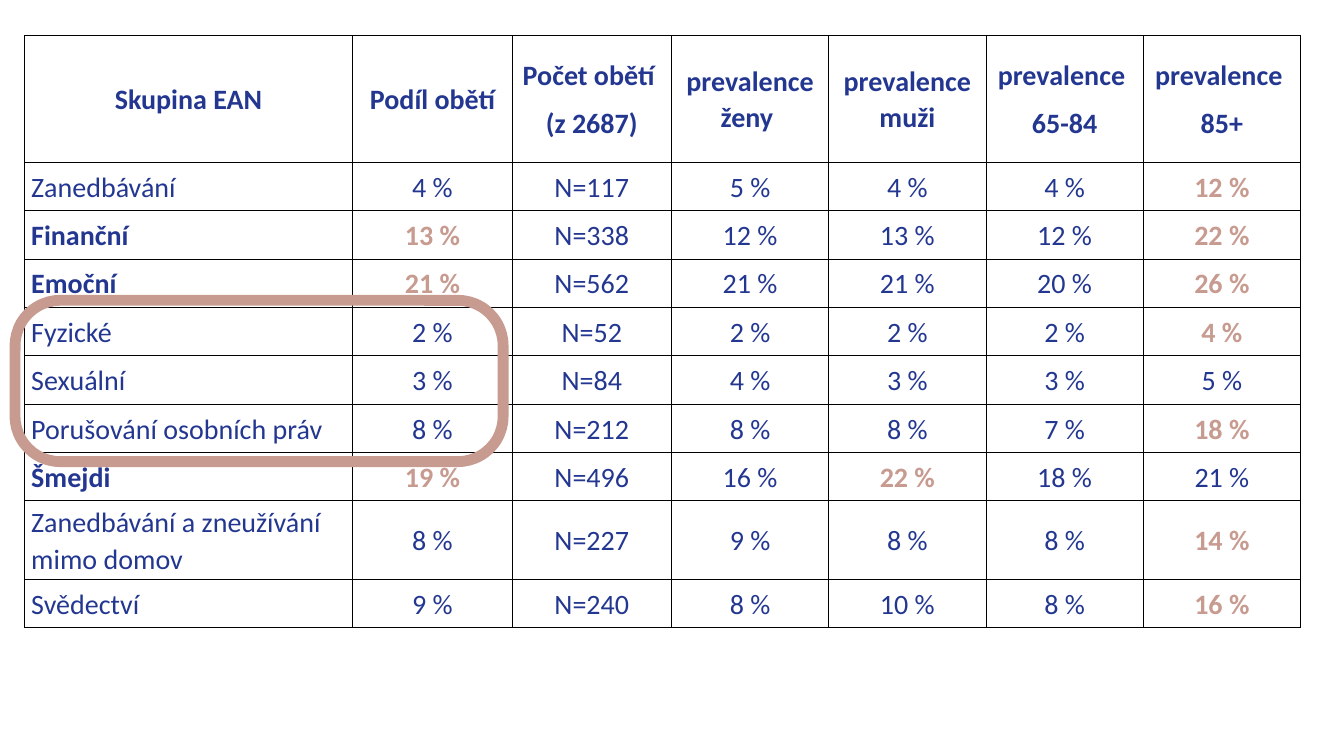
import pptx
import pptx.dml.color
import pptx.enum.shapes
import pptx.enum.text
import pptx.oxml
import pptx.oxml.ns
import pptx.util

Inches = pptx.util.Inches
Pt = pptx.util.Pt
ALIGN = pptx.enum.text.PP_ALIGN

NAVY, ROSE, BLACK = "233791", "C89B91", "000000"
COL_WIDTHS = [3.26] + [1.58] * 2 + [1.56] * 4
ROW_HEIGHTS = [1.26] + [0.48] * 7 + [0.78, 0.48]

HEADER = ["Skupina EAN", "Podíl obětí", "Počet obětí \n(z 2687)", "prevalence ženy ",
          "prevalence muži", "prevalence \n65-84", "prevalence \n85+"]
# group, share, victims, women, men, 65-84, 85+
GROUPS = [
    ("Zanedbávání", 4, 117, 5, 4, 4, 12),
    ("Finanční", 13, 338, 12, 13, 12, 22),
    ("Emoční", 21, 562, 21, 21, 20, 26),
    ("Fyzické", 2, 52, 2, 2, 2, 4),
    ("Sexuální", 3, 84, 4, 3, 3, 5),
    ("Porušování osobních práv", 8, 212, 8, 8, 7, 18),
    ("Šmejdi", 19, 496, 16, 22, 18, 21),
    ("Zanedbávání a zneužívání mimo domov", 8, 227, 9, 8, 8, 14),
    ("Svědectví", 9, 240, 8, 10, 8, 16),
]
MAIN_GROUPS = {"Finanční", "Emoční", "Šmejdi"}
VICTIMS_COL, OLDEST_COL = 2, 6


def rgb(value):
    return pptx.dml.color.RGBColor.from_string(value)


def is_highlighted(group, col):
    """Tell whether a figure stands out in bold rose."""
    if col == 1:
        return group in MAIN_GROUPS
    if col == 4:
        return group == "Šmejdi"
    return col == OLDEST_COL and group not in {"Sexuální", "Šmejdi"}


def add_borders(cell, color=BLACK, width=0.75):
    tcPr = cell._tc.get_or_add_tcPr()
    for i, side in enumerate(("lnL", "lnR", "lnT", "lnB")):
        tcPr.insert(i, pptx.oxml.parse_xml(
            f'<a:{side} {pptx.oxml.ns.nsdecls("a")} w="{Pt(width)}">'
            f'<a:solidFill><a:srgbClr val="{color}"/></a:solidFill></a:{side}>'))


def fill_cell(cell, text, align=ALIGN.CENTER, bold=False, color=NAVY):
    cell_format = {
        "vertical_anchor": pptx.enum.text.MSO_ANCHOR.MIDDLE,
        "margin_left": Inches(0.07), "margin_right": Inches(0.07),
        "margin_top": 0, "margin_bottom": 0, "text": text,
    }
    for name, value in cell_format.items():
        setattr(cell, name, value)
    cell.fill.background()
    add_borders(cell)
    for p in cell.text_frame.paragraphs:
        p.alignment, p.line_spacing, p.space_after = align, 1.07, Pt(8)
        for r in p.runs:
            for name, value in {"name": "Calibri", "size": Pt(20), "bold": bold}.items():
                setattr(r.font, name, value)
            r.font.color.rgb = rgb(color)


def add_prevalence_table(s, left, top):
    frame = s.shapes.add_table(
        len(ROW_HEIGHTS), len(COL_WIDTHS), Inches(left), Inches(top),
        Inches(sum(COL_WIDTHS)), Inches(sum(ROW_HEIGHTS)))
    table = frame.table
    table.horz_banding = False
    for column, width in zip(table.columns, COL_WIDTHS):
        column.width = Inches(width)
    for row, height in zip(table.rows, ROW_HEIGHTS):
        row.height = Inches(height)

    for col, title in enumerate(HEADER):
        fill_cell(table.cell(0, col), title, bold=True)
    for row, (group, *figures) in enumerate(GROUPS, 1):
        fill_cell(table.cell(row, 0), group, ALIGN.LEFT, group in MAIN_GROUPS)
        for col, figure in enumerate(figures, 1):
            text = f"N={figure}" if col == VICTIMS_COL else f"{figure} %"
            strong = is_highlighted(group, col)
            fill_cell(table.cell(row, col), text, bold=strong,
                      color=ROSE if strong else NAVY)


def add_highlight_frame(s, left, top, width, height):
    sp = s.shapes.add_shape(
        pptx.enum.shapes.MSO_SHAPE.ROUNDED_RECTANGLE,
        Inches(left), Inches(top), Inches(width), Inches(height))
    sp.adjustments[0] = 0.28
    sp.shadow.inherit = False
    sp.fill.background()
    sp.line.color.rgb = rgb(ROSE)
    sp.line.width = Pt(7.75)


def main():
    prs = pptx.Presentation()
    prs.slide_width, prs.slide_height = Inches(13.33), Inches(7.5)
    s = prs.slides.add_slide(prs.slide_layouts[6])
    add_prevalence_table(s, 0.24, 0.35)
    add_highlight_frame(s, 0.15, 2.98, 4.84, 1.6)
    prs.save("out.pptx")


if __name__ == "__main__":
    main()
